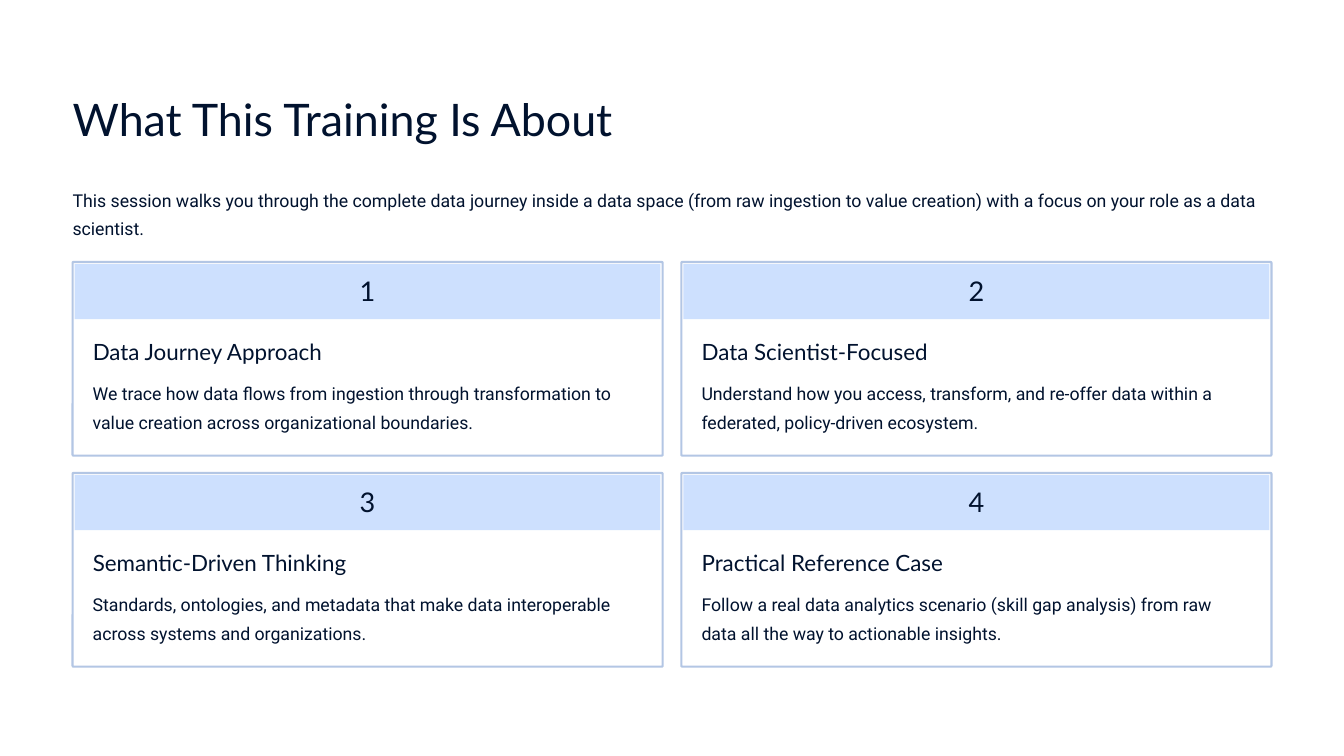
from pptx import Presentation
from pptx.dml.color import RGBColor
from pptx.enum.shapes import MSO_SHAPE as Shape
from pptx.enum.text import MSO_ANCHOR as Anchor, MSO_AUTO_SIZE as AutoSize, PP_ALIGN as Align
from pptx.util import Inches, Pt

NAVY = RGBColor(0x01, 0x12, 0x2E)
BORDER = RGBColor(0xB3, 0xC6, 0xE4)
BAND = RGBColor(0xCD, 0xE0, 0xFE)
WHITE = RGBColor(0xFF, 0xFF, 0xFF)

TITLE = {"name": "Lato", "size": Pt(24)}
HEADING = {"name": "Lato", "size": Pt(12)}
NUMBER = {"name": "Lato", "size": Pt(14.5)}
BODY = {"name": "Roboto", "size": Pt(9.5)}

LEFT, TOP = 0.54, 1.95
CARD_WIDTH, CARD_HEIGHT = 4.39, 1.44
BAND_WIDTH, BAND_HEIGHT = 4.36, 0.41
NUMBER_WIDTH = 0.2
COLUMN_STEP, ROW_STEP = 4.53, 1.57

INTRO = (
    "This session walks you through the complete data journey inside a data space "
    "(from raw ingestion to value creation) with a focus on your role as a data scientist."
)
CARDS = [
    ("Data Journey Approach",
     "We trace how data flows from ingestion through transformation to "
     "value creation across organizational boundaries."),
    ("Data Scientist-Focused",
     "Understand how you access, transform, and re-offer data within a "
     "federated, policy-driven ecosystem."),
    ("Semantic-Driven Thinking",
     "Standards, ontologies, and metadata that make data interoperable "
     "across systems and organizations."),
    ("Practical Reference Case",
     "Follow a real data analytics scenario (skill gap analysis) from raw "
     "data all the way to actionable insights."),
]


def write_text(holder, text, style, spacing=1.0, align=Align.LEFT, anchor=Anchor.TOP):
    frame = holder.text_frame
    frame_format = {
        "margin_left": 0, "margin_top": 0, "margin_right": 0, "margin_bottom": 0,
        "word_wrap": True, "auto_size": AutoSize.NONE, "vertical_anchor": anchor,
    }
    for key, value in frame_format.items():
        setattr(frame, key, value)
    frame.text = text
    paragraph = frame.paragraphs[0]
    paragraph.alignment = align
    paragraph.line_spacing = spacing
    for key, value in style.items():
        setattr(paragraph.font, key, value)
    paragraph.font.color.rgb = NAVY


def add_title(slide, text, left, top, width, height):
    title = slide.shapes.title
    place = {"left": left, "top": top, "width": width, "height": height}
    for key, value in place.items():
        setattr(title, key, Inches(value))
    write_text(title, text, TITLE, 1.04)


def add_text(slide, text, box, style, **layout):
    holder = slide.shapes.add_textbox(*map(Inches, box))
    write_text(holder, text, style, **layout)


def add_panel(slide, preset, box, fill, border=None):
    panel = slide.shapes.add_shape(preset, *map(Inches, box))
    panel.shadow.inherit = False
    panel.fill.solid()
    panel.fill.fore_color.rgb = fill
    if border is None:
        panel.line.fill.background()
    else:
        panel.line.color.rgb = border
        panel.line.width = Pt(1.12)
    return panel


def add_card(slide, number, heading, description, left, top):
    frame = add_panel(slide, Shape.ROUNDED_RECTANGLE,
                      (left, top, CARD_WIDTH, CARD_HEIGHT), WHITE, BORDER)
    frame.adjustments[0] = 0.004
    inset = (CARD_WIDTH - BAND_WIDTH) / 2
    add_panel(slide, Shape.RECTANGLE,
              (left + inset, top + inset, BAND_WIDTH, BAND_HEIGHT), BAND)
    number_left = left + (CARD_WIDTH - NUMBER_WIDTH) / 2
    add_text(slide, str(number), (number_left, top + 0.09, NUMBER_WIDTH, 0.25), NUMBER,
             align=Align.CENTER, anchor=Anchor.MIDDLE)
    add_text(slide, heading, (left + 0.15, top + 0.56, 2.01, 0.21), HEADING, spacing=1.04)
    add_text(slide, description, (left + 0.15, top + 0.85, 4.07, 0.43), BODY, spacing=1.33)


def main():
    deck = Presentation()
    deck.slide_width = Inches(10)
    deck.slide_height = deck.slide_width * 9 // 16
    slide = deck.slides.add_slide(deck.slide_layouts[5])
    slide.background.fill.solid()
    slide.background.fill.fore_color.rgb = WHITE

    add_title(slide, "What This Training Is About", LEFT, 0.67, 4.85, 0.42)
    add_text(slide, INTRO, (LEFT, 1.36, 8.91, 0.43), BODY, spacing=1.33)
    for index, (heading, description) in enumerate(CARDS):
        row, column = divmod(index, 2)
        add_card(slide, index + 1, heading, description,
                 LEFT + column * COLUMN_STEP, TOP + row * ROW_STEP)

    deck.save("out.pptx")


if __name__ == "__main__":
    main()
